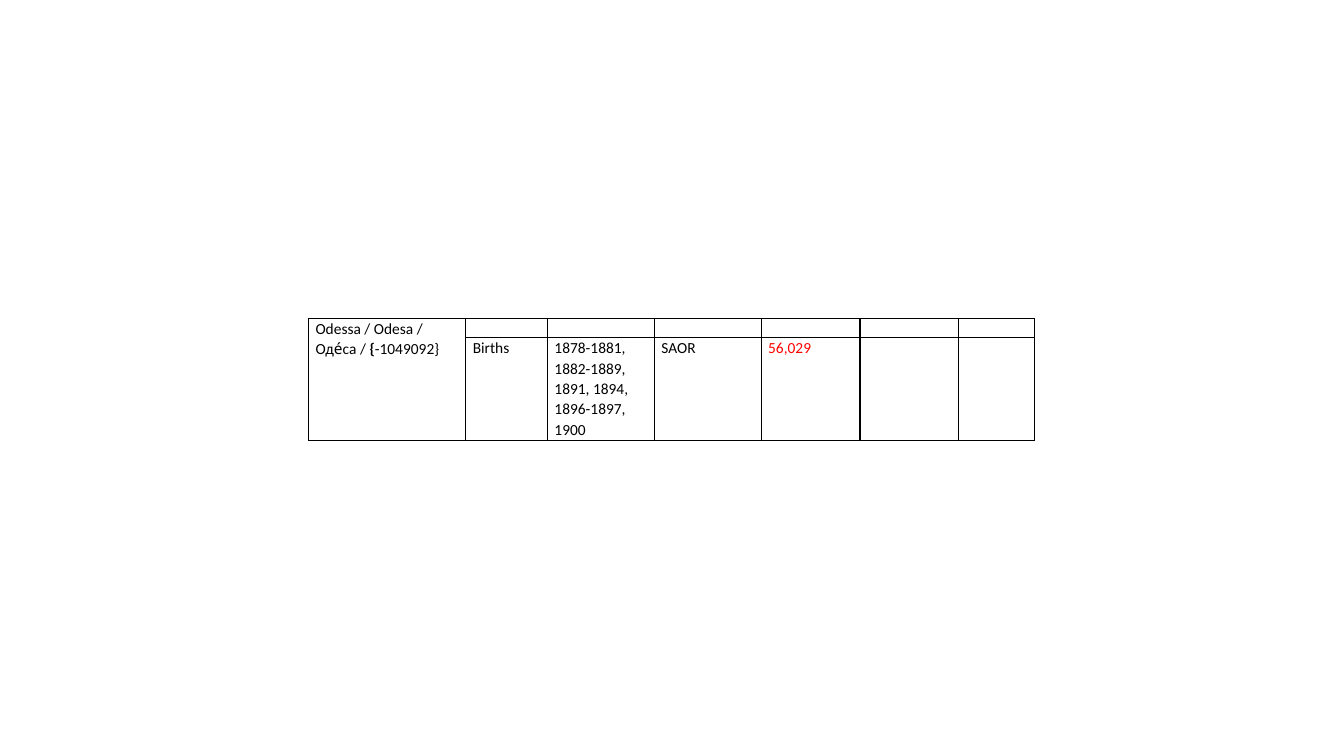
from lxml.etree import SubElement
from pptx import Presentation
from pptx.dml.color import RGBColor
from pptx.oxml import parse_xml
from pptx.oxml.ns import nsdecls, qn
from pptx.util import Inches, Pt

WIDE, HIGH = 13.33, 7.5
LEFT, TOP = 3.06, 3.16
COLS = [1.56, 0.81, 1.06, 1.06, 0.98, 0.98, 0.75]
ROWS = [0.19, 1.02]
BLACK, RED = "000000", "FF0000"
SIZE = 11
PAD = {"margin_left": 0.07, "margin_right": 0.07,
       "margin_top": 0, "margin_bottom": 0}

# Runs of each filled cell, by row and column: text, colour, bold
TEXTS = {
    (0, 0): [("Odessa / Odesa / Оде́са / ", BLACK, False),
             ("{", BLACK, True), ("-1049092}", BLACK, False)],
    (1, 1): [("Births", BLACK, False)],
    (1, 2): [("1878-1881, 1882-1889, 1891, 1894, 1896-1897, 1900",
              BLACK, False)],
    (1, 3): [("SAOR", BLACK, False)],
    (1, 4): [("56,029", RED, False)],
}


def paint(color, code):
    color.rgb = RGBColor.from_string(code)


def border(cell, code=BLACK, width=1):
    props = cell._tc.get_or_add_tcPr()
    for spot, side in enumerate(("lnL", "lnR", "lnT", "lnB")):
        props.insert(spot, parse_xml(
            f'<a:{side} {nsdecls("a")} w="{Pt(width)}"><a:solidFill>'
            f'<a:srgbClr val="{code}"/></a:solidFill></a:{side}>'))


def write(cell, runs):
    para = cell.text_frame.paragraphs[0]
    if not runs:
        # An empty cell takes its height from the end mark
        SubElement(para._p, qn("a:endParaRPr"), sz=str(SIZE * 100))
        return
    para.line_spacing = 1.07
    for text, code, bold in runs:
        run = para.add_run()
        run.text = text
        look = {"name": "Calibri", "size": Pt(SIZE), "bold": bold}
        for key, value in look.items():
            setattr(run.font, key, value)
        paint(run.font.color, code)


def dress(cell, runs):
    for key, value in PAD.items():
        setattr(cell, key, Inches(value))
    cell.fill.background()
    border(cell)
    write(cell, runs)


def add_grid(slide):
    frame = slide.shapes.add_table(
        len(ROWS), len(COLS), Inches(LEFT), Inches(TOP),
        Inches(sum(COLS)), Inches(sum(ROWS)))
    table = frame.table
    table.first_row = table.horz_banding = False
    for col, width in zip(table.columns, COLS):
        col.width = Inches(width)
    for row, height in zip(table.rows, ROWS):
        row.height = Inches(height)

    # The town name spans both rows
    table.cell(0, 0).merge(table.cell(1, 0))
    for row in range(len(ROWS)):
        for col in range(len(COLS)):
            dress(table.cell(row, col), TEXTS.get((row, col)))


def main():
    deck = Presentation()
    deck.slide_width, deck.slide_height = Inches(WIDE), Inches(HIGH)
    slide = deck.slides.add_slide(deck.slide_layouts[6])
    add_grid(slide)
    deck.save("out.pptx")


if __name__ == "__main__":
    main()
